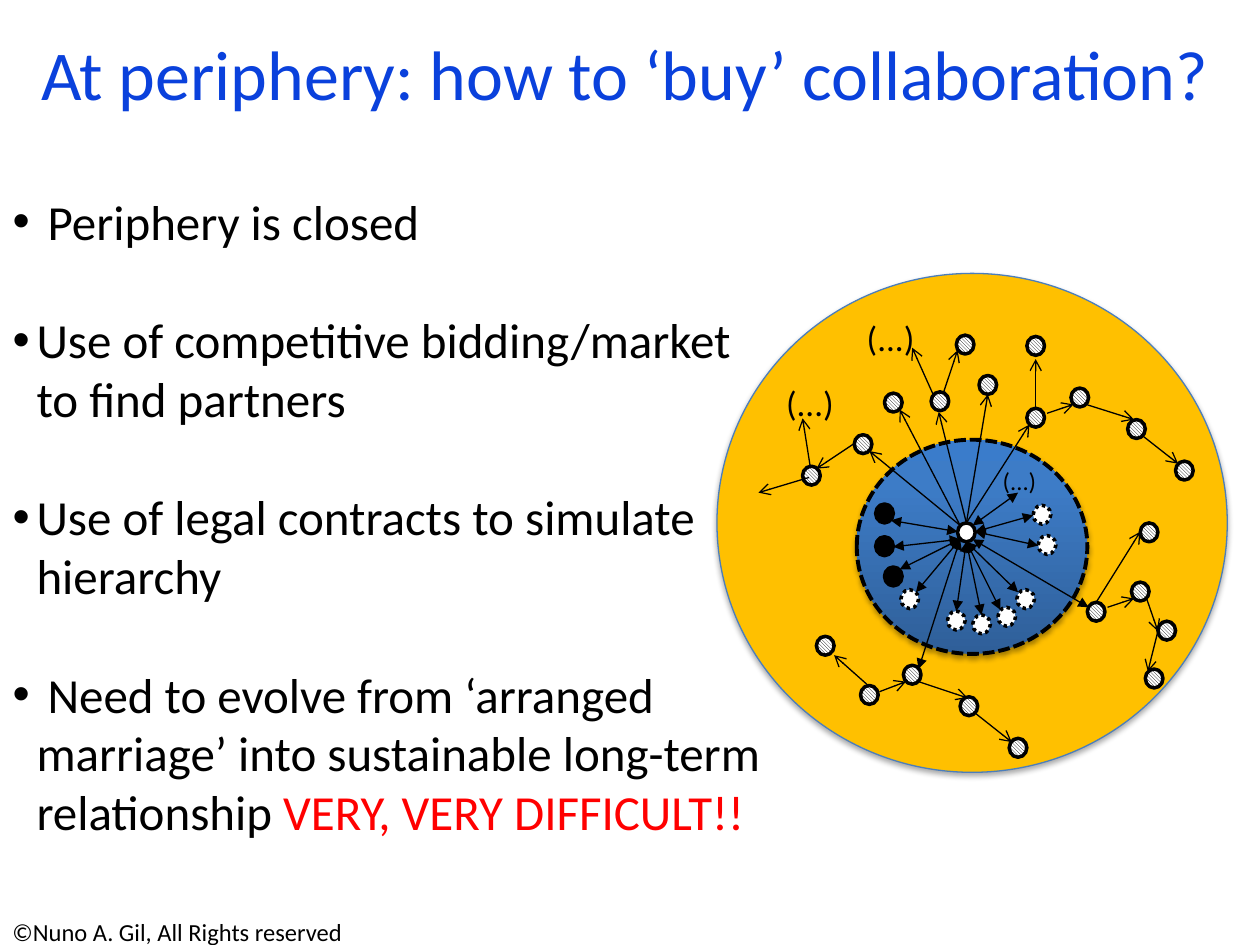
from copy import deepcopy
from dataclasses import dataclass

from lxml.etree import SubElement
from pptx import Presentation
from pptx.dml.color import RGBColor
from pptx.enum.dml import MSO_LINE, MSO_PATTERN
from pptx.enum.shapes import MSO_CONNECTOR, MSO_SHAPE
from pptx.enum.text import MSO_ANCHOR, MSO_AUTO_SIZE, PP_ALIGN
from pptx.oxml.ns import qn
from pptx.util import Emu, Pt

PX = 9144


@dataclass(frozen=True)
class Theme:
    font: str = "Calibri"
    black: str = "000000"
    white: str = "FFFFFF"
    title: str = "0A41DC"
    warning: str = "FF0000"
    outer: str = "FFC000"
    outer_edge: str = "4B7EBC"
    core: tuple = ((0, "2F5F99"), (0.8, "3D7CC7"), (1, "3A7CCB"))
    title_size: int = 40
    body_size: int = 28
    label_size: int = 20
    small_size: int = 14
    node_line: float = 2
    core_line: float = 2.25
    thin_line: float = 0.75


T = Theme()

TITLE = "At periphery: how to ‘buy’ collaboration?"
FOOTER = "©Nuno A. Gil, All Rights reserved"
BULLETS = [
    [(" Periphery is closed", T.black)],
    [("Use of competitive bidding/market to find partners", T.black)],
    [("Use of legal contracts to simulate hierarchy", T.black)],
    [(" Need to evolve from ‘arranged marriage’ into sustainable "
      "long-term relationship ", T.black),
     ("VERY, VERY DIFFICULT!!", T.warning)],
]
LABELS = [
    ("(...)", (614, 298, 68, 41), T.label_size),
    ("(...)", (678, 246, 68, 41), T.label_size),
    ("(...)", (786, 365, 68, 31), T.small_size),
]

OUTER = (569, 217, 405, 396)
CORE = (680, 349, 183, 170)
NODE_W, NODE_H = 14, 15
NODES = {
    "hub": [(760, 415)],
    "solid": [(702, 450), (695, 426), (695, 400)],
    "dotted": [(715, 468), (772, 488), (752, 485), (792, 482),
               (807, 468), (824, 425), (820, 401)],
    "hatched": [(739, 311), (777, 298), (702, 312), (678, 345), (637, 370),
                (815, 324), (850, 308), (895, 333), (815, 267), (759, 266),
                (933, 366), (683, 544), (717, 528), (762, 553), (648, 505),
                (801, 586), (863, 478), (898, 462), (919, 493), (905, 415),
                (909, 531)],
}
TWO_WAY = {
    (762, 428): [(714, 452), (727, 470), (729, 531), (709, 434)],
    (772, 428): [(864, 482)],
    (767, 430): [(759, 485), (808, 470), (794, 484), (779, 488)],
    (760, 422): [(707, 413)],
    (774, 422): [(824, 433), (820, 409)],
    (772, 417): [(808, 391)],
}
ONE_WAY = {
    (767, 415): [(784, 313), (817, 337), (745, 327)],
    (762, 417): [(714, 325), (690, 358)],
    (678, 352): [(648, 372)],
    (831, 328): [(852, 321)],
    (862, 321): [(900, 333)],
    (822, 324): [(822, 285)],
    (642, 379): [(602, 391)],
    (643, 370): [(637, 332)],
    (741, 314): [(724, 276)],
    (749, 311): [(760, 278)],
    (907, 346): [(935, 368)],
    (698, 549): [(719, 541)],
    (729, 541): [(768, 554)],
    (689, 544): [(662, 520)],
    (774, 566): [(803, 589)],
    (879, 482): [(900, 475)],
    (910, 475): [(919, 501)],
    (870, 478): [(905, 422)],
    (919, 501): [(911, 533)],
}


def rgb(value):
    return RGBColor.from_string(value)


def emu(*lengths):
    return [Emu(v * PX) for v in lengths]


def place(sp, box):
    sp.left, sp.top, sp.width, sp.height = emu(*box)


def add_run(p, text, size, color):
    r = p.add_run()
    r.text = text
    r.font.name, r.font.size = T.font, Pt(size)
    r.font.color.rgb = rgb(color)


def add_text(shapes, text, box, size, wrap=True):
    tf = shapes.add_textbox(*emu(*box)).text_frame
    tf.word_wrap = wrap
    add_run(tf.paragraphs[0], text, size, T.black)


def add_ellipse(shapes, box, color, width):
    sp = shapes.add_shape(MSO_SHAPE.OVAL, *emu(*box))
    sp.shadow.inherit = False
    sp.line.color.rgb = rgb(color)
    sp.line.width = Pt(width)
    return sp


def fill_solid(sp, color):
    sp.fill.solid()
    sp.fill.fore_color.rgb = rgb(color)


def fill_core(sp):
    sp.fill.gradient()
    sp.fill.gradient_angle = 90
    stops = sp.element.spPr.find(qn("a:gradFill")).find(qn("a:gsLst"))
    stops.append(deepcopy(stops[-1]))
    for stop, (position, color) in zip(sp.fill.gradient_stops, T.core):
        stop.position = position
        stop.color.rgb = rgb(color)


def add_shadow(sp):
    effects = sp.element.spPr.find(qn("a:effectLst"))
    shadow = SubElement(effects, qn("a:outerShdw"), blurRad="40000",
                        dist="23000", dir="5400000", rotWithShape="0")
    color = SubElement(shadow, qn("a:srgbClr"), val=T.black)
    SubElement(color, qn("a:alpha"), val="35000")


def add_node(shapes, kind, x, y):
    sp = add_ellipse(shapes, (x, y, NODE_W, NODE_H), T.black, T.node_line)
    if kind == "hatched":
        sp.fill.patterned()
        sp.fill.pattern = MSO_PATTERN.LIGHT_DOWNWARD_DIAGONAL
        sp.fill.fore_color.rgb = rgb(T.black)
        sp.fill.back_color.rgb = rgb(T.white)
    else:
        fill_solid(sp, T.black if kind == "solid" else T.white)
    if kind == "dotted":
        sp.line.dash_style = MSO_LINE.ROUND_DOT


def add_links(shapes, links, **ends):
    for start, targets in links.items():
        for target in targets:
            c = shapes.add_connector(MSO_CONNECTOR.STRAIGHT, *emu(*start, *target))
            c.line.color.rgb = rgb(T.black)
            c.line.width = Pt(T.thin_line)
            ln = c.element.spPr.find(qn("a:ln"))
            for end, arrow in ends.items():
                SubElement(ln, qn(f"a:{end}"), type=arrow)
            SubElement(c.element.spPr, qn("a:effectLst"))


def add_network(shapes):
    outer = add_ellipse(shapes, OUTER, T.outer_edge, T.thin_line)
    fill_solid(outer, T.outer)
    core = add_ellipse(shapes, CORE, T.black, T.core_line)
    fill_core(core)
    core.line.dash_style = MSO_LINE.SQUARE_DOT
    for sp in (outer, core):
        add_shadow(sp)
    for kind, spots in NODES.items():
        for x, y in spots:
            add_node(shapes, kind, x, y)
    add_links(shapes, TWO_WAY, headEnd="triangle", tailEnd="triangle")
    add_links(shapes, ONE_WAY, tailEnd="arrow")
    for text, box, size in LABELS:
        add_text(shapes, text, box, size)


def fill_title(sp):
    place(sp, (-20, 38, 1032, 39))
    tf = sp.text_frame
    tf.auto_size, tf.vertical_anchor = MSO_AUTO_SIZE.NONE, MSO_ANCHOR.MIDDLE
    p = tf.paragraphs[0]
    p.alignment = PP_ALIGN.CENTER
    add_run(p, TITLE, T.title_size, T.title)


def fill_body(sp):
    place(sp, (0, 147, 614, 531))
    tf = sp.text_frame
    tf.auto_size, tf.vertical_anchor = MSO_AUTO_SIZE.NONE, MSO_ANCHOR.TOP
    for i, runs in enumerate(BULLETS):
        p = tf.add_paragraph() if i else tf.paragraphs[0]
        p.space_before = Pt(34 if i else 0)
        pPr = p._p.get_or_add_pPr()
        pPr.set("marL", str(19 * PX))
        pPr.set("indent", str(-19 * PX))
        SubElement(pPr, qn("a:buChar"), char="•")
        for text, color in runs:
            add_run(p, text, T.body_size, color)


def main():
    prs = Presentation()
    prs.slide_width, prs.slide_height = emu(1000, 750)
    s = prs.slides.add_slide(prs.slide_layouts[1])
    add_network(s.shapes.add_group_shape().shapes)
    fill_title(s.shapes.title)
    fill_body(s.placeholders[1])
    add_text(s.shapes, FOOTER, (0, 723, 311, 33), T.small_size, wrap=False)
    prs.save("out.pptx")


if __name__ == "__main__":
    main()
